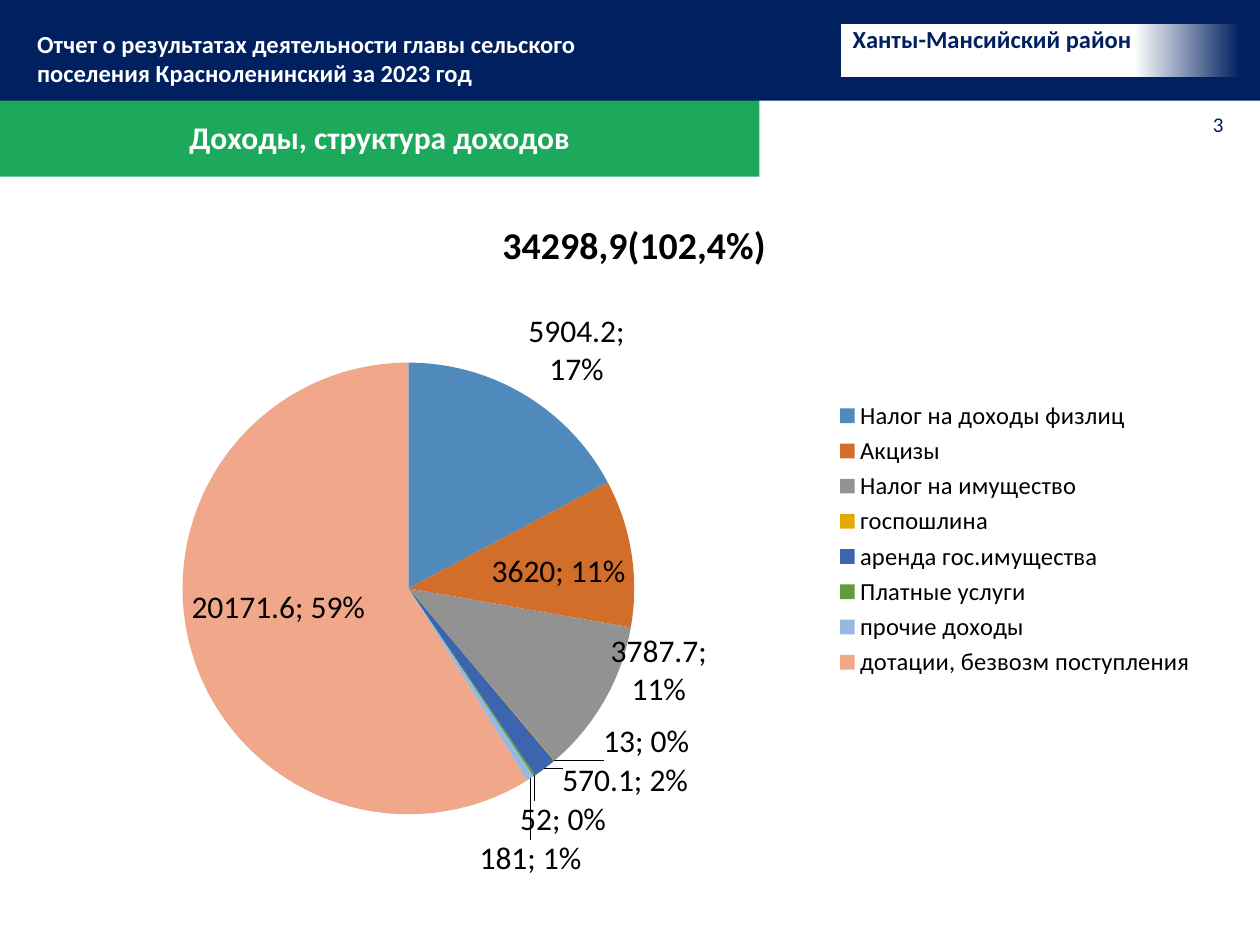
from lxml.etree import fromstring
from pptx import Presentation
from pptx.chart.data import CategoryChartData as Data
from pptx.dml.color import RGBColor as Rgb
from pptx.enum.chart import XL_CHART_TYPE as Kind, XL_LABEL_POSITION as Spot, XL_LEGEND_POSITION as Side
from pptx.enum.shapes import MSO_SHAPE as Form
from pptx.enum.text import MSO_ANCHOR as Anchor, PP_ALIGN as Align
from pptx.util import Cm, Pt

NAVY, GREEN, WHITE, BLACK = "002060", "1DA95C", "FFFFFF", "000000"
FONT = "Calibri"
NS = "http://schemas.openxmlformats.org/drawingml/2006/chart"
TOTAL = "34298,9(102,4%)"
INCOME = [
    ("Налог на доходы физлиц", 5904.2, "5089BC"),
    ("Акцизы", 3620, "D26E2A"),
    ("Налог на имущество", 3787.7, "929292"),
    ("госпошлина", 13, "E2AA00"),
    ("аренда гос.имущества", 570.1, "3D65AF"),
    ("Платные услуги", 52, "629A3E"),
    ("прочие доходы", 181, "97B9E0"),
    ("дотации, безвозм поступления", 20171.6, "F1A78A"),
]


def tint(text):
    return Rgb.from_string(text)


def style(font, size, color, bold=False):
    font.name, font.size, font.bold = FONT, Pt(size), bold
    font.color.rgb = tint(color)


def place(shape, x, y, w, h):
    shape.left, shape.top, shape.width, shape.height = Cm(x), Cm(y), Cm(w), Cm(h)


def write(shape, text, size, color, bold=False, align=Align.LEFT, anchor=Anchor.TOP):
    frame = shape.text_frame
    frame.word_wrap = True
    frame.vertical_anchor = anchor
    frame.text = text
    for para in frame.paragraphs:
        para.alignment = align
        for run in para.runs:
            style(run.font, size, color, bold)
    return frame


def block(slide, x, y, w, h):
    shape = slide.shapes.add_shape(Form.RECTANGLE, Cm(x), Cm(y), Cm(w), Cm(h))
    shape.shadow.inherit = False
    shape.line.fill.background()
    return shape


def label(slide, x, y, w, h, *text):
    box = slide.shapes.add_textbox(Cm(x), Cm(y), Cm(w), Cm(h))
    return write(box, *text)


def header(slide, x, y, w, h):
    band = block(slide, x, y, w, h)
    band.fill.solid()
    band.fill.fore_color.rgb = tint(NAVY)

    badge = block(slide, x + 16.96, y + 0.48, 8.2, 1.07)
    badge.fill.gradient()
    badge.fill.gradient_angle = 180
    for stop, (spot, color) in zip(badge.fill.gradient_stops, [(0.02, NAVY), (0.28, WHITE)]):
        stop.position, stop.color.rgb = spot, tint(color)
    frame = write(badge, "Ханты-Мансийский район", 14, NAVY, True)
    frame.margin_left, frame.margin_top = Cm(0.23), Cm(0)

    label(slide, x + 0.5, y + 0.46, 11.86, 1.45,
          "Отчет о результатах деятельности главы сельского "
          "поселения Красноленинский за 2023 год", 14, WHITE, True)


def heading(slide, x, y, w, h):
    title = slide.shapes.title
    place(title, x, y, w, h)
    title.fill.solid()
    title.fill.fore_color.rgb = tint(GREEN)
    write(title, "Доходы, структура доходов", 18, WHITE, True, Align.CENTER, Anchor.MIDDLE)


def pie(slide, x, y, w, h):
    data = Data()
    data.categories = [name for name, _, _ in INCOME]
    data.add_series(TOTAL, [value for _, value, _ in INCOME])
    chart = slide.shapes.add_chart(Kind.PIE, Cm(x), Cm(y), Cm(w), Cm(h), data).chart
    style(chart.font, 18, BLACK)

    chart.has_title = True
    chart.chart_title.text_frame.text = TOTAL
    style(chart.chart_title.text_frame.paragraphs[0].runs[0].font, 21.6, BLACK, True)

    chart.has_legend = True
    chart.legend.position = Side.RIGHT
    chart.legend.include_in_layout = False
    style(chart.legend.font, 14, BLACK)

    plot = chart.plots[0]
    plot.vary_by_categories = True
    for i, (_, _, color) in enumerate(INCOME):
        fill = plot.series[0].points[i].format.fill
        fill.solid()
        fill.fore_color.rgb = tint(color)

    plot.has_data_labels = True
    marks = plot.data_labels
    marks.show_value = marks.show_percentage = True
    marks.position = Spot.BEST_FIT
    style(marks.font, 18, BLACK)
    last = chart.element.find(f".//{{{NS}}}dLbls/{{{NS}}}showBubbleSize")
    last.addnext(fromstring(f'<c:separator xmlns:c="{NS}">; </c:separator>'))


def main():
    deck = Presentation()
    deck.slide_width, deck.slide_height = Cm(25.4), Cm(19.05)
    slide = deck.slides.add_slide(deck.slide_layouts[5])
    header(slide, 0, 0, 25.4, 2.03)
    heading(slide, 0, 1.96, 15.31, 1.6)
    label(slide, 23.95, 2.13, 1.22, 0.76, "3", 12, NAVY, False, Align.CENTER)
    pie(slide, 1.22, 3.84, 23.14, 14.05)
    deck.save("out.pptx")


if __name__ == "__main__":
    main()
